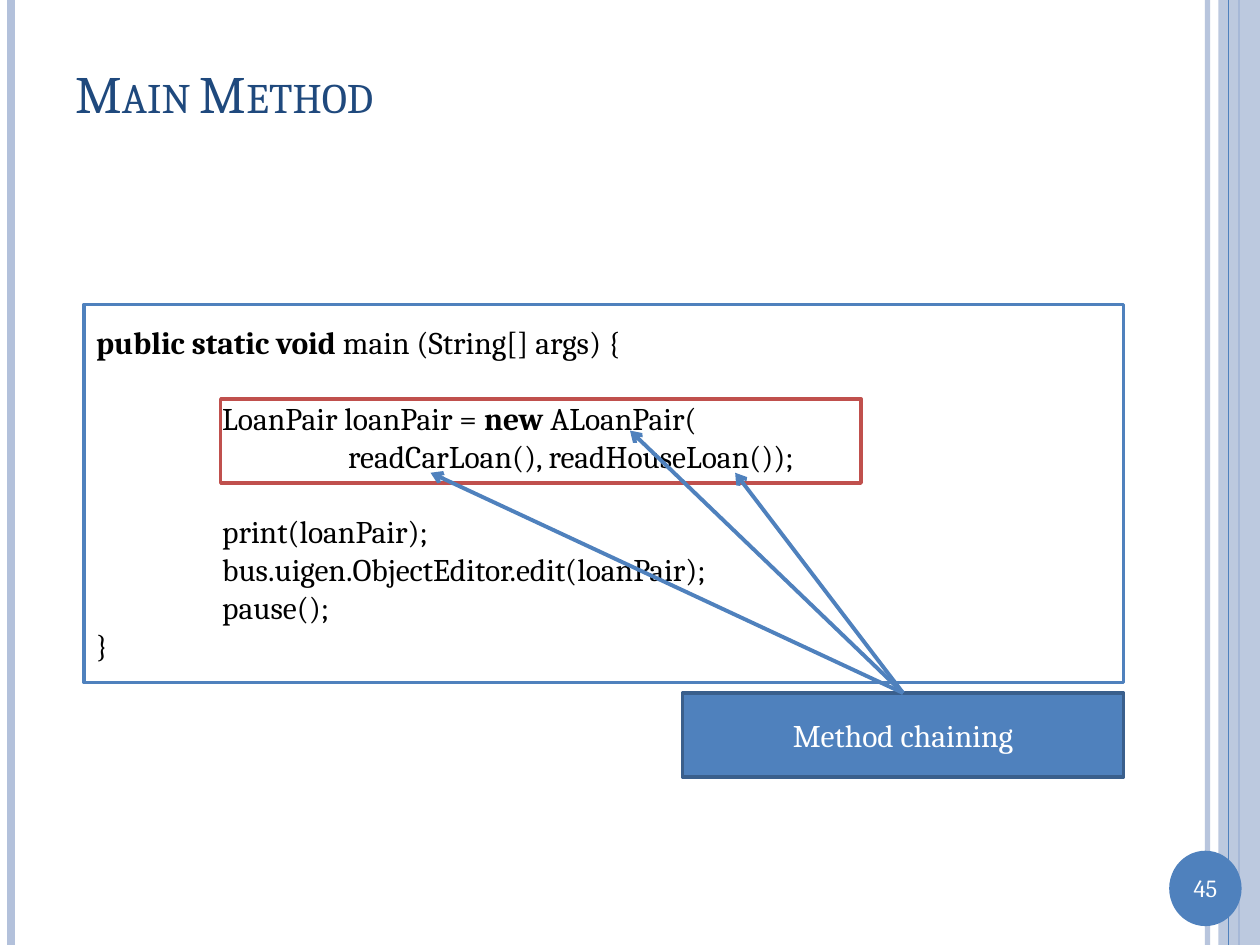
from dataclasses import dataclass

from lxml.etree import SubElement
from pptx import Presentation
from pptx.dml.color import RGBColor
from pptx.enum.shapes import MSO_CONNECTOR as Connector, MSO_SHAPE as Shape
from pptx.enum.text import MSO_ANCHOR as Anchor, PP_ALIGN as Align
from pptx.oxml.ns import qn
from pptx.util import Cm, Pt

FONT = "Cambria"
COLORS = {
    "white": "FFFFFF", "black": "000000", "title": "1F497D", "blue": "4F81BD",
    "pale": "B3C1DB", "red": "C0504D", "edge": "3A5F8C",
}
WIDTH, HEIGHT = 25.4, 19.05  # centimetres
INDENT = 2.54  # centimetres per code level
LINE_PITCH = 21.6  # points, height of one code line


@dataclass
class Box:
    left: float
    top: float
    width: float
    height: float
    fill: str | None = None
    line: str | None = None
    alpha: int = 100
    kind: Shape = Shape.RECTANGLE


@dataclass
class Stripe:
    x: float
    color: str
    weight: float
    alpha: int = 100


@dataclass
class CodeLine:
    level: int
    runs: list[tuple[str, bool]]  # text, bold
    gap_before: bool = False


def rgb(name: str) -> RGBColor:
    return RGBColor.from_string(COLORS[name])


def set_alpha(shape, percent: int) -> None:
    if percent < 100:
        color = next(shape._element.spPr.iter(qn("a:srgbClr")))
        SubElement(color, qn("a:alpha"), val=str(percent * 1000))


def draw_box(slide, box: Box):
    shape = slide.shapes.add_shape(
        box.kind, Cm(box.left), Cm(box.top), Cm(box.width), Cm(box.height))
    shape.shadow.inherit = False
    if box.fill:
        shape.fill.solid()
        shape.fill.fore_color.rgb = rgb(box.fill)
        set_alpha(shape, box.alpha)
    else:
        shape.fill.background()
    if box.line:
        shape.line.color.rgb = rgb(box.line)
        shape.line.width = Pt(2)
    else:
        shape.line.fill.background()
    return shape


def draw_line(slide, start: tuple, end: tuple, color: str, weight: float, alpha: int = 100):
    line = slide.shapes.add_connector(Connector.STRAIGHT, *map(Cm, start + end))
    line.line.color.rgb = rgb(color)
    line.line.width = Pt(weight)
    set_alpha(line, alpha)
    SubElement(line._element.spPr, qn("a:effectLst"))
    return line


def write(paragraph, text: str, *, size: float = 18, color: str = "black", bold: bool = False,
          align: Align = Align.LEFT, small_caps: bool = False) -> None:
    paragraph.alignment = align
    run = paragraph.add_run()
    run.text = text
    run.font.name, run.font.size, run.font.bold = FONT, Pt(size), bold
    run.font.color.rgb = rgb(color)
    if small_caps:
        run._r.get_or_add_rPr().set("cap", "small")


def add_text_box(slide, left: float, top: float, width: float, height: float):
    frame = slide.shapes.add_textbox(Cm(left), Cm(top), Cm(width), Cm(height)).text_frame
    frame.word_wrap = True
    frame.vertical_anchor = Anchor.MIDDLE
    return frame.paragraphs[0]


def write_code(shape, lines: list[CodeLine]) -> None:
    frame = shape.text_frame
    frame.vertical_anchor = Anchor.MIDDLE
    for index, line in enumerate(lines):
        paragraph = frame.add_paragraph() if index else frame.paragraphs[0]
        paragraph.space_before = Pt(LINE_PITCH if line.gap_before else 0)
        properties = paragraph._p.get_or_add_pPr()
        properties.set("marL", str(Cm(line.level * INDENT)))
        properties.set("indent", "0")
        for text, bold in line.runs:
            write(paragraph, text, bold=bold)


STRIPES = [
    Stripe(24.34, "pale", 3, 93),
    Stripe(0.22, "pale", 4.5),
    Stripe(24.98, "blue", 1.5),
    Stripe(24.77, "blue", 0.75),
]
SIDE_BAND = Box(24.56, 0, 0.84, HEIGHT, "pale", alpha=87)
NUMBER_DISC = Box(23.57, 17.15, 1.46, 1.52, "blue", kind=Shape.OVAL)
CODE_BOX = Box(1.69, 6.14, 20.96, 7.62, "white", "blue")
HIGHLIGHT = Box(4.45, 8.04, 12.91, 1.7, line="red")
CALLOUT = Box(13.76, 13.97, 8.89, 1.7, "blue", "edge")
ARROW_TIPS = [(14.82, 9.53), (8.68, 9.53), (12.7, 8.68)]
CODE = [
    CodeLine(0, [("public static void", True), (" main (String[] args) {", False)]),
    CodeLine(1, [("LoanPair loanPair = ", False), ("new", True), (" ALoanPair(", False)], True),
    CodeLine(2, [("readCarLoan(), readHouseLoan());", False)]),
    CodeLine(1, [("print(loanPair);", False)], True),
    CodeLine(1, [("bus.uigen.ObjectEditor.edit(loanPair);", False)]),
    CodeLine(1, [("pause();", False)]),
    CodeLine(0, [("}", False)]),
]


def main() -> None:
    presentation = Presentation()
    presentation.slide_width, presentation.slide_height = Cm(WIDTH), Cm(HEIGHT)
    slide = presentation.slides.add_slide(presentation.slide_layouts[6])

    # Side decoration: the band lies over all stripes but the last
    for stripe in STRIPES:
        if stripe is STRIPES[-1]:
            draw_box(slide, SIDE_BAND)
        draw_line(slide, (stripe.x, 0), (stripe.x, HEIGHT),
                  stripe.color, stripe.weight, stripe.alpha)

    # Slide number
    draw_box(slide, NUMBER_DISC)
    write(add_text_box(slide, 23.57, 17.46, 1.46, 0.86), "45",
          size=14, color="white", align=Align.CENTER)

    # Title
    write(add_text_box(slide, 1.27, 0.76, 22.02, 2.21), "Main Method",
          size=30, color="title", small_caps=True)

    # Code with its highlighted statement
    write_code(draw_box(slide, CODE_BOX), CODE)
    draw_box(slide, HIGHLIGHT)

    # Callout and its arrows
    callout = draw_box(slide, CALLOUT)
    callout.text_frame.vertical_anchor = Anchor.MIDDLE
    write(callout.text_frame.paragraphs[0], "Method chaining",
          color="white", align=Align.CENTER)
    top_middle = (CALLOUT.left + CALLOUT.width / 2, CALLOUT.top)
    for tip in ARROW_TIPS:
        arrow = draw_line(slide, top_middle, tip, "blue", 2.25)
        arrow.begin_connect(callout, 0)
        SubElement(arrow.line._get_or_add_ln(), qn("a:tailEnd"), type="arrow")

    presentation.save("out.pptx")


if __name__ == "__main__":
    main()
